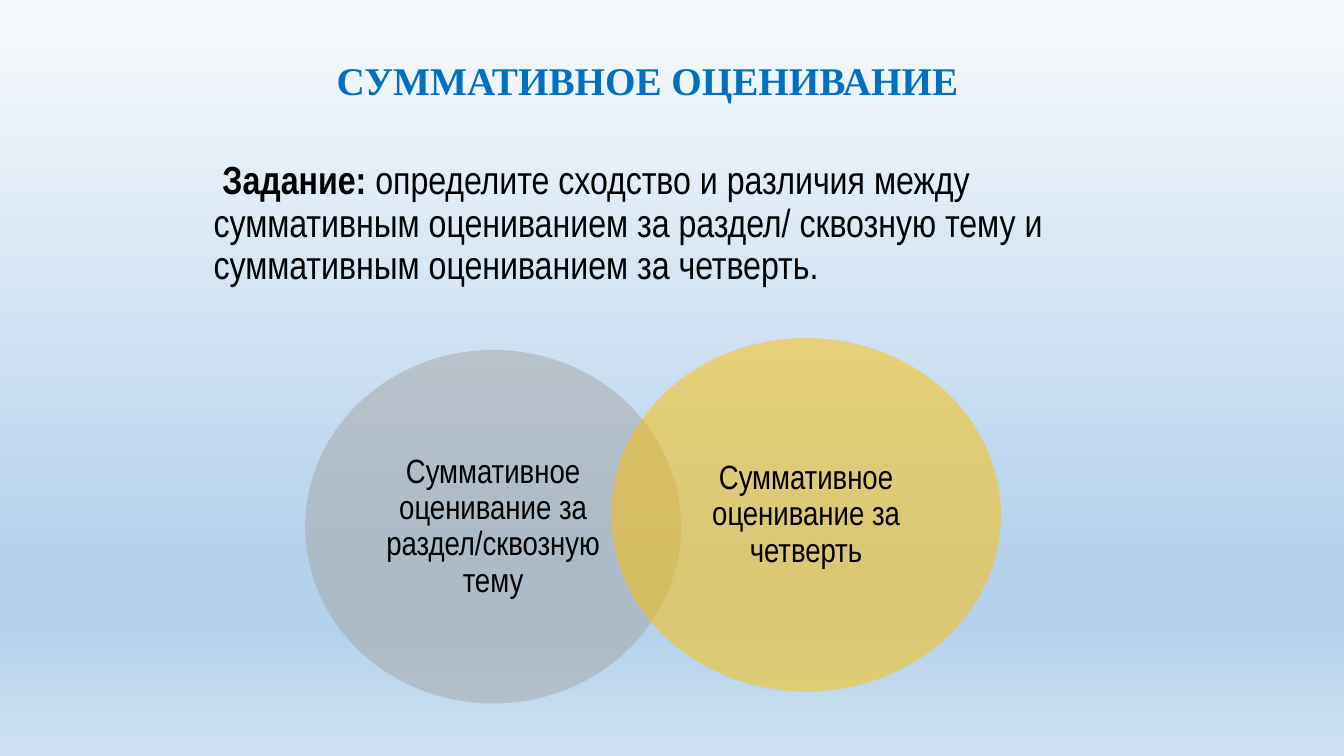
from lxml import etree
from pptx import Presentation
from pptx import util as u
from pptx.dml.color import RGBColor
from pptx.enum import shapes, text
from pptx.oxml.ns import qn

BLACK = RGBColor(0x00, 0x00, 0x00)
BLUE = RGBColor(0x00, 0x70, 0xC0)
GREY = RGBColor(0xA5, 0xA5, 0xA5)
GOLD = RGBColor(0xFF, 0xC0, 0x00)
PALE = RGBColor(0xF7, 0xFA, 0xFD)
SKY = RGBColor(0xB5, 0xD2, 0xEC)
MIST = RGBColor(0xCE, 0xE1, 0xF2)
BACKGROUND_STOPS = [(0, PALE), (74, SKY), (83, SKY), (100, MIST)]


def write(paragraph, content, font="Arial Narrow", size=28, color=BLACK, bold=False):
    """Add a formatted run of text to a paragraph."""
    run = paragraph.add_run()
    run.text = content
    run.font.name = font
    run.font.size = u.Pt(size)
    run.font.color.rgb = color
    run.font.bold = bold


def paint_background(slide):
    """Fill the slide with a vertical gradient of several stops."""
    fill = slide.background.fill
    fill.gradient()
    fill.gradient_angle = 270
    stops = slide.element.find(".//" + qn("a:gsLst"))
    for stop in list(stops):
        stops.remove(stop)
    for position, color in BACKGROUND_STOPS:
        stop = etree.SubElement(stops, qn("a:gs"), pos=str(position * 1000))
        etree.SubElement(stop, qn("a:srgbClr"), val=str(color))


def add_text_box(slide, box, wrap=True):
    """Add a text box and return its first paragraph."""
    frame = slide.shapes.add_textbox(*map(u.Pt, box)).text_frame
    frame.word_wrap = wrap
    return frame.paragraphs[0]


def add_title(slide, box):
    """Place the centred heading."""
    paragraph = add_text_box(slide, box, wrap=False)
    paragraph.alignment = text.PP_ALIGN.CENTER
    write(paragraph, "СУММАТИВНОЕ ОЦЕНИВАНИЕ", font="Times New Roman", color=BLUE, bold=True)


def add_task(slide, box):
    """Place the wording of the task with its bold lead."""
    paragraph = add_text_box(slide, box)
    paragraph.line_spacing = 0.9
    paragraph.space_before = u.Pt(10)
    write(paragraph, " Задание: ", bold=True)
    write(paragraph, "определите сходство и различия между суммативным оцениванием "
                     "за раздел/ сквозную тему и суммативным оцениванием за четверть.")


def add_venn_circle(slide, box, label, color):
    """Place a half-transparent ellipse with a centred label."""
    circle = slide.shapes.add_shape(shapes.MSO_SHAPE.OVAL, *map(u.Pt, box))
    circle.shadow.inherit = False
    circle.line.fill.background()
    circle.fill.solid()
    circle.fill.fore_color.rgb = color
    tint = circle.element.spPr.find(qn("a:solidFill")).find(qn("a:srgbClr"))
    etree.SubElement(tint, qn("a:alpha"), val="50000")
    frame = circle.text_frame
    frame.word_wrap = True
    frame.vertical_anchor = text.MSO_ANCHOR.MIDDLE
    frame.margin_left = frame.margin_right = u.Pt(7.2)
    frame.margin_top = frame.margin_bottom = u.Pt(7.2)
    paragraph = frame.paragraphs[0]
    paragraph.alignment = text.PP_ALIGN.CENTER
    paragraph.line_spacing = 0.9
    write(paragraph, label, size=24)


def add_venn(slide, box):
    """Place the two overlapping circles in the given box."""
    left, top, width, height = box
    diameter = height - 8.5
    grey_width, gold_width = 268.5, 278.5
    add_venn_circle(slide, (left, top + height - diameter, grey_width, diameter),
                    "Суммативное оценивание за раздел/сквозную тему", GREY)
    add_venn_circle(slide, (left + width - gold_width, top, gold_width, diameter),
                    "Суммативное оценивание за четверть", GOLD)


def main():
    """Build the slide and save it."""
    presentation = Presentation()
    presentation.slide_width = u.Pt(960)
    presentation.slide_height = u.Pt(540)
    slide = presentation.slides.add_slide(presentation.slide_layouts[6])
    paint_background(slide)
    add_task(slide, (145.5, 111.5, 648, 113))
    add_venn(slide, (218, 241.5, 497, 261))
    add_title(slide, (231, 36.7, 463, 41))
    presentation.save("out.pptx")


if __name__ == "__main__":
    main()
